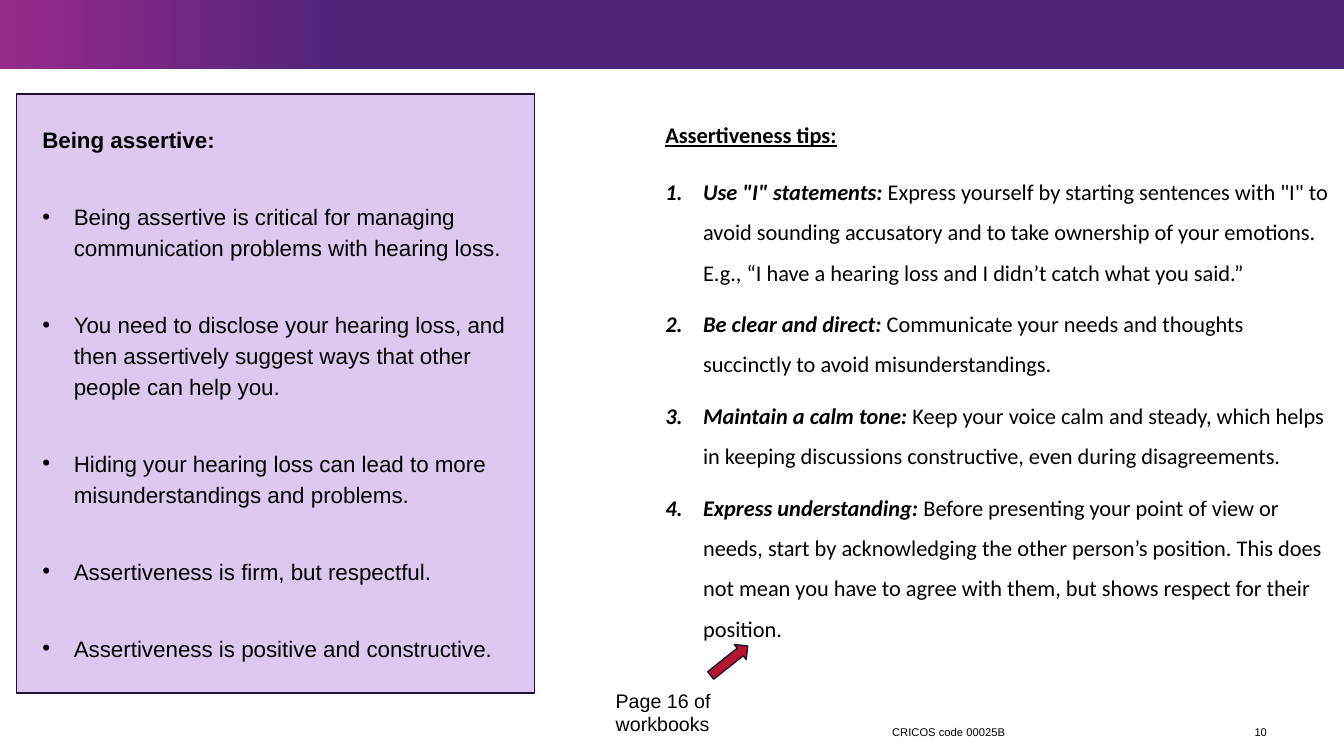
import pptx
import pptx.util
import pptx.dml.color
import pptx.enum.shapes
import pptx.enum.text
import pptx.oxml

Pt = pptx.util.Pt
RGB = pptx.dml.color.RGBColor
Shape = pptx.enum.shapes.MSO_SHAPE
Align = pptx.enum.text.PP_ALIGN
Anchor = pptx.enum.text.MSO_ANCHOR

BLACK = RGB(0x00, 0x00, 0x00)
PURPLE = RGB(0x51, 0x24, 0x7A)
PINK = RGB(0x96, 0x2A, 0x8B)
LILAC = RGB(0xDD, 0xC9, 0xEF)
RED = RGB(0xB4, 0x15, 0x2F)
DARK = RGB(0x24, 0x10, 0x35)

# Content
HEAD = "Being assertive:"
POINTS = [
    "Being assertive is critical for managing communication problems with hearing loss.",
    "You need to disclose your hearing loss, and then assertively suggest ways that other people can help you.",
    "Hiding your hearing loss can lead to more misunderstandings and problems.",
    "Assertiveness is firm, but respectful.",
    "Assertiveness is positive and constructive.",
]
TIPHEAD = "Assertiveness tips:"
TIPS = [
    ('Use "I" statements:',
     ' Express yourself by starting sentences with "I" to avoid sounding accusatory and to take '
     "ownership of your emotions. E.g., “I have a hearing loss and I didn’t catch what you said.”"),
    ("Be clear and direct:",
     " Communicate your needs and thoughts succinctly to avoid misunderstandings."),
    ("Maintain a calm tone:",
     " Keep your voice calm and steady, which helps in keeping discussions constructive, "
     "even during disagreements."),
    ("Express understanding:",
     " Before presenting your point of view or needs, start by acknowledging the other person’s "
     "position. This does not mean you have to agree with them, but shows respect for their position."),
]
# Small labels: text, box, size, alignment, anchor, inset
NOTES = [
    ("CRICOS code 00025B", (637.2, 513.4, 188.6, 18.7), 8, Align.LEFT, Anchor.MIDDLE, 0),
    ("10", (882.7, 513.4, 22.3, 18.7), 8, Align.RIGHT, Anchor.MIDDLE, 0),
    ("Page 16 of workbooks", (432.7, 488.2, 113, 41), 14, Align.LEFT, Anchor.TOP, 1),
]
DOT = ('<a:buFont {ns} typeface="Arial"/>', '<a:buChar {ns} char="•"/>')
NUMBER = ('<a:buFont {ns} typeface="+mj-lt"/>', '<a:buAutoNum {ns} type="arabicPeriod"/>')
PLAIN = ("<a:buNone {ns}/>",)
NS = 'xmlns:a="http://schemas.openxmlformats.org/drawingml/2006/main"'


def place(item, box):
    item.left, item.top, item.width, item.height = map(Pt, box)


def setup(frame, x, y):
    frame.word_wrap = True
    frame.auto_size = pptx.enum.text.MSO_AUTO_SIZE.NONE
    frame.margin_left = frame.margin_right = Pt(x)
    frame.margin_top = frame.margin_bottom = Pt(y)


def para(frame, first, marks, indent, lead, before, after):
    p = frame.paragraphs[0] if first else frame.add_paragraph()
    props = p._p.get_or_add_pPr()
    props.set("marL", str(Pt(indent)))
    props.set("indent", str(-Pt(indent)))
    for mark in marks:
        props.append(pptx.oxml.parse_xml(mark.format(ns=NS)))
    p.line_spacing = lead
    p.space_before, p.space_after = Pt(before), Pt(after)
    return p


def write(p, text, size, face, bold=False, italic=False, under=False):
    run = p.add_run()
    run.text = text
    font = run.font
    font.size, font.name = Pt(size), face
    font.bold, font.italic, font.underline = bold, italic, under
    font.color.rgb = BLACK


def block(slide, kind, box, fill):
    item = slide.shapes.add_shape(kind, *map(Pt, box))
    item.shadow.inherit = False
    item.fill.solid()
    item.fill.fore_color.rgb = fill
    item.line.color.rgb = DARK
    item.line.width = Pt(1)
    return item


def main():
    deck = pptx.Presentation()
    deck.slide_width, deck.slide_height = Pt(960), Pt(540)
    slide = deck.slides.add_slide(deck.slide_layouts[3])
    title, left, right = slide.placeholders
    title._element.getparent().remove(title._element)

    # Top band
    band = block(slide, Shape.RECTANGLE, (0, 0, 960, 49.5), PURPLE)
    band.line.fill.background()
    band.fill.gradient()
    band.fill.gradient_angle = 0
    for stop, spot, tone in zip(band.fill.gradient_stops, (0, 0.25), (PINK, PURPLE)):
        stop.position, stop.color.rgb = spot, tone

    # Panel behind the left list
    panel = block(slide, Shape.RECTANGLE, (12, 67, 370, 428), LILAC)
    for back in (panel, band):
        slide.shapes._spTree.insert(2, back._element)

    # Left list
    place(left, (30.2, 87.1, 358.6, 390))
    frame = left.text_frame
    setup(frame, 0, 0)
    write(para(frame, True, PLAIN, 0, 1.15, 0, 3), HEAD, 16, "Arial", bold=True)
    for point in POINTS:
        write(para(frame, False, DOT, 22.5, 1.15, 30, 3), point, 16, "Arial")

    # Right list
    place(right, (468, 73.4, 491.8, 389.5))
    frame = right.text_frame
    setup(frame, 7.2, 3.6)
    write(para(frame, True, PLAIN, 0, 1.5, 0, 12), TIPHEAD, 16, "Calibri", bold=True, under=True)
    for name, text in TIPS:
        p = para(frame, False, NUMBER, 27, 1.5, 0, 8)
        write(p, name, 16, "Calibri", bold=True, italic=True)
        write(p, text, 16, "Calibri")

    # Footer and page note
    for text, box, size, align, anchor, inset in NOTES:
        frame = slide.shapes.add_textbox(*map(Pt, box)).text_frame
        setup(frame, 7.2 * inset, 3.6 * inset)
        frame.vertical_anchor = anchor
        frame.paragraphs[0].alignment = align
        write(frame.paragraphs[0], text, size, "Arial")

    # Arrow from the page note to the tips
    arrow = block(slide, Shape.RIGHT_ARROW, (504, 465.1, 33.8, 13.7), RED)
    arrow.rotation = 321.5

    deck.save("out.pptx")


if __name__ == "__main__":
    main()
